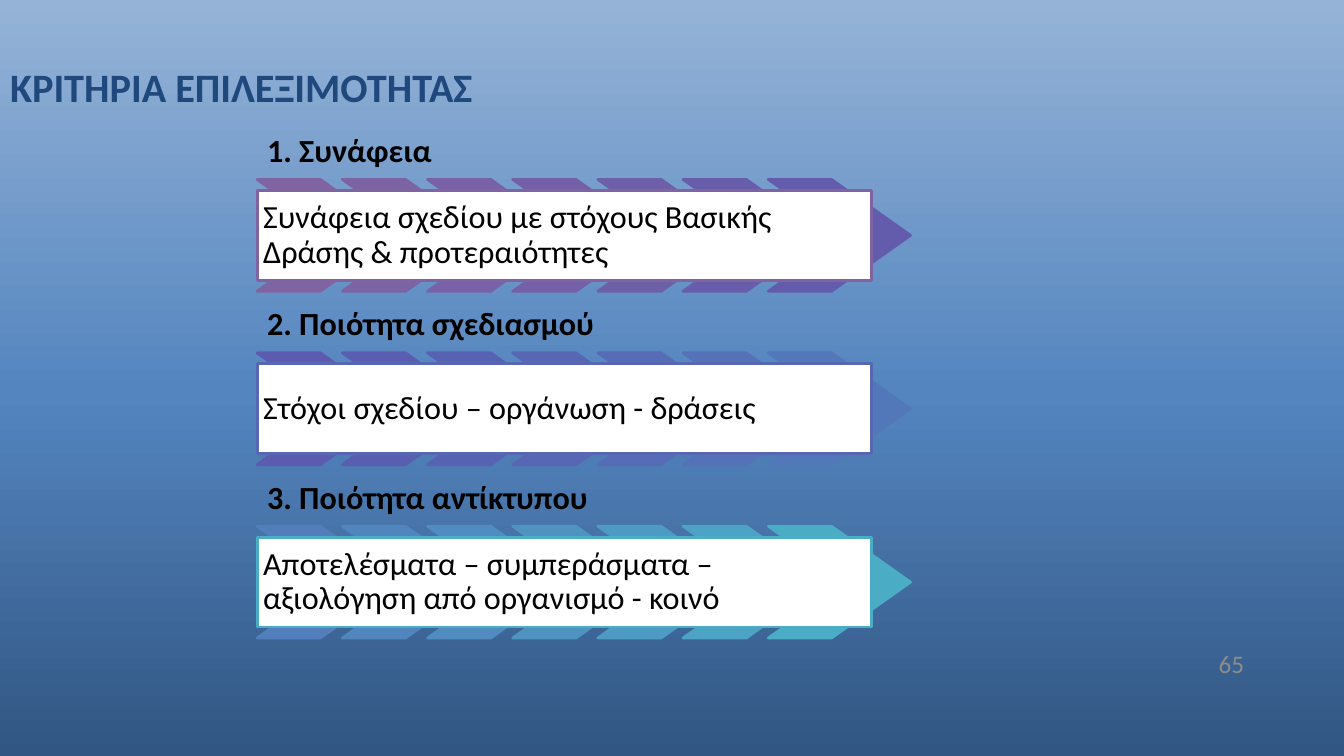
from copy import deepcopy

from pptx import Presentation
from pptx.dml.color import RGBColor
from pptx.enum.shapes import MSO_SHAPE
from pptx.enum.text import MSO_ANCHOR, PP_ALIGN
from pptx.oxml.ns import qn
from pptx.util import Inches, Pt

TITLE = "ΚΡΙΤΗΡΙΑ ΕΠΙΛΕΞΙΜΟΤΗΤΑΣ"
PAGE_NUMBER = "65"
CRITERIA = [
    ("1. Συνάφεια",
     "Συνάφεια σχεδίου με στόχους Βασικής Δράσης & προτεραιότητες",
     ["8064A2", "7C63A4", "7861A6", "7360A8", "6E5FA9", "685DAB", "635CAD"]),
    ("2. Ποιότητα σχεδιασμού",
     "Στόχοι σχεδίου – οργάνωση - δράσεις",
     ["5C5BAF", "5A5EB1", "5862B3", "5767B4", "566CB6", "5572B8", "5378BA"]),
    ("3. Ποιότητα αντίκτυπου",
     "Αποτελέσματα – συμπεράσματα – αξιολόγηση από οργανισμό - κοινό",
     ["527EBC", "5185BD", "508CBF", "4F93C1", "4D9BC3", "4CA3C4", "4BACC6"]),
]


class Theme:
    font = "Calibri"
    background = [(0, "315683"), (0.48, "5485BF"), (1, "95B3D7")]
    title = "1F497D"
    text = "000000"
    number = "8C8C8C"
    box = "FFFFFF"
    title_size = 28.8
    text_size = 23
    number_size = 18
    line_width = 2


LEFT = 2.55
FIRST_TOP = 1.23
ROW_STEP = 1.72
LABEL_WIDTH, LABEL_HEIGHT = 6.01, 0.55
CHEVRON_WIDTH, CHEVRON_HEIGHT = 1.41, 1.11
CHEVRON_STEP = 0.845
CHEVRON_POINT = 0.706
BOX_WIDTH, BOX_HEIGHT = 6.09, 0.89


def write_text(shape, text, size=Theme.text_size, color=Theme.text, bold=False,
               align=PP_ALIGN.LEFT, anchor=MSO_ANCHOR.TOP, inset=0, spacing=1.0):
    frame = shape.text_frame
    frame.word_wrap = True
    frame.vertical_anchor = anchor
    frame.margin_left = frame.margin_right = Inches(inset)
    frame.margin_top = frame.margin_bottom = Inches(inset)
    paragraph = frame.paragraphs[0]
    paragraph.alignment = align
    paragraph.line_spacing = spacing
    run = paragraph.add_run()
    run.text = text
    run.font.name = Theme.font
    run.font.size = Pt(size)
    run.font.bold = bold
    run.font.color.rgb = RGBColor.from_string(color)


def add_text(slide, text, left, top, width, height, **text_format):
    box = slide.shapes.add_textbox(
        Inches(left), Inches(top), Inches(width), Inches(height))
    write_text(box, text, **text_format)


def add_block(slide, kind, left, top, width, height, fill, line):
    shape = slide.shapes.add_shape(
        kind, Inches(left), Inches(top), Inches(width), Inches(height))
    shape.shadow.inherit = False
    shape.fill.solid()
    shape.fill.fore_color.rgb = RGBColor.from_string(fill)
    shape.line.color.rgb = RGBColor.from_string(line)
    shape.line.width = Pt(Theme.line_width)
    return shape


def paint_background(slide):
    fill = slide.background.fill
    fill.gradient()
    fill.gradient_angle = 90
    stop_list = next(slide.element.iter(qn("a:gsLst")))
    stop_list.append(deepcopy(stop_list[-1]))
    for stop, (position, color) in zip(fill.gradient_stops, Theme.background):
        stop.position = position
        stop.color.rgb = RGBColor.from_string(color)


def add_criterion(slide, top, label, detail, colors):
    add_text(slide, label, LEFT, top, LABEL_WIDTH, LABEL_HEIGHT, bold=True,
             anchor=MSO_ANCHOR.BOTTOM, inset=0.1, spacing=0.9)
    chevron_top = top + LABEL_HEIGHT
    for index, color in enumerate(colors):
        chevron = add_block(slide, MSO_SHAPE.CHEVRON, LEFT + index * CHEVRON_STEP,
                            chevron_top, CHEVRON_WIDTH, CHEVRON_HEIGHT, color, color)
        chevron.adjustments[0] = CHEVRON_POINT
    return chevron_top + (CHEVRON_HEIGHT - BOX_HEIGHT) / 2


def main():
    presentation = Presentation()
    presentation.slide_width = Inches(13.33)
    presentation.slide_height = Inches(7.5)
    slide = presentation.slides.add_slide(presentation.slide_layouts[6])
    paint_background(slide)
    add_text(slide, TITLE, 0.1, 0.62, 11.33, 0.49,
             size=Theme.title_size, color=Theme.title, bold=True)
    add_text(slide, PAGE_NUMBER, 11.5, 6.43, 0.84, 0.4,
             size=Theme.number_size, color=Theme.number, align=PP_ALIGN.RIGHT)
    for row, (label, detail, colors) in enumerate(CRITERIA):
        box_top = add_criterion(slide, FIRST_TOP + row * ROW_STEP, label, detail, colors)
        box = add_block(slide, MSO_SHAPE.RECTANGLE, LEFT, box_top,
                        BOX_WIDTH, BOX_HEIGHT, Theme.box, colors[row * 3])
        write_text(box, detail, anchor=MSO_ANCHOR.MIDDLE, inset=0.06, spacing=0.9)
    presentation.save("out.pptx")


if __name__ == "__main__":
    main()
